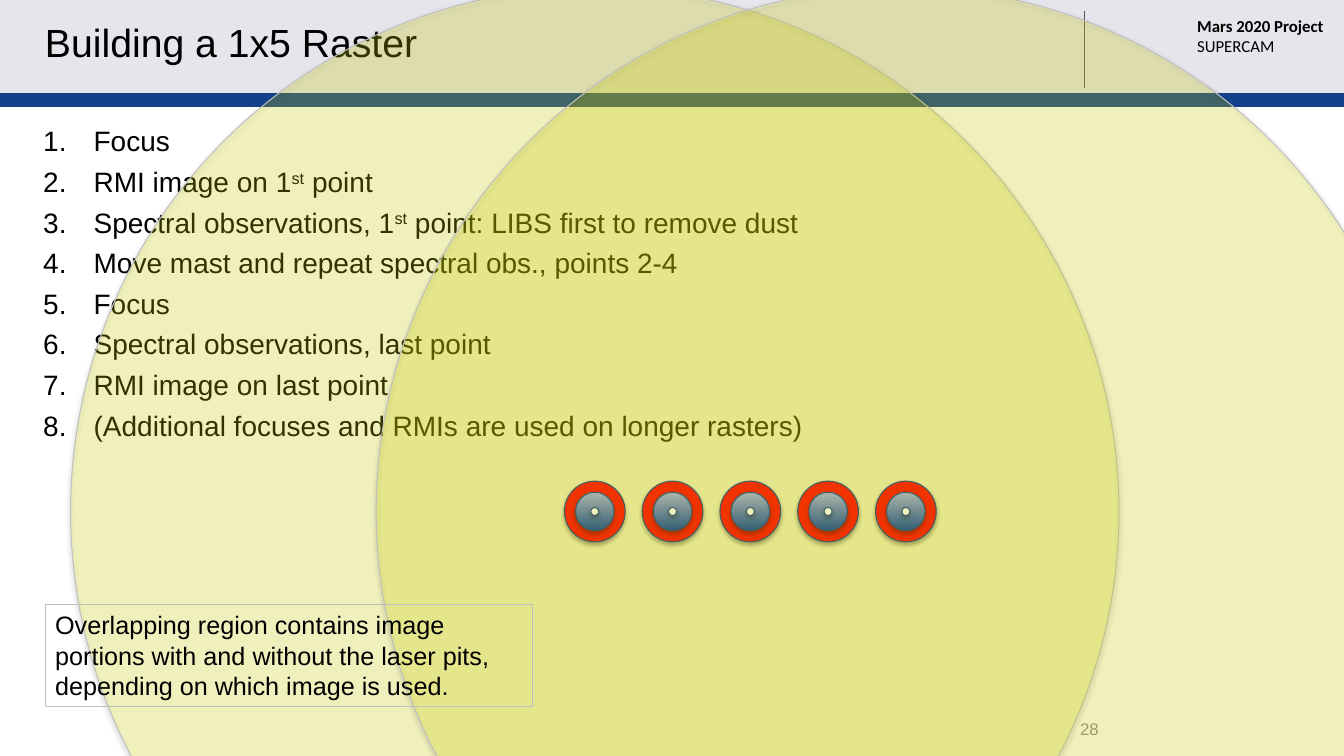
from lxml import etree
from pptx import Presentation
from pptx.dml.color import RGBColor
from pptx.enum.shapes import MSO_CONNECTOR, MSO_SHAPE
from pptx.enum.text import MSO_ANCHOR, PP_ALIGN
from pptx.oxml.ns import qn
from pptx.util import Cm, Pt

RECTANGLE, ELLIPSE = MSO_SHAPE.RECTANGLE, MSO_SHAPE.OVAL
STRAIGHT = MSO_CONNECTOR.STRAIGHT
MIDDLE, TOP = MSO_ANCHOR.MIDDLE, MSO_ANCHOR.TOP
LEFT, RIGHT = PP_ALIGN.LEFT, PP_ALIGN.RIGHT
NO_TABLE_STYLE = "{2D5ABB26-0587-4C30-8999-92F81FD0307C}"
TITLE_ONLY = 5
PAGE_WIDTH, PAGE_HEIGHT = 33.87, 19.05

STEPS = [
    "Focus",
    "RMI image on 1^st^ point",
    "Spectral observations, 1^st^ point: LIBS first to remove dust",
    "Move mast and repeat spectral obs., points 2-4",
    "Focus",
    "Spectral observations, last point",
    "RMI image on last point",
    "(Additional focuses and RMIs are used on longer rasters)",
]


def color(value):
    return RGBColor.from_string(value)


def child(parent, tag, **attributes):
    return etree.SubElement(parent, qn(tag), attributes)


class RasterSlide:
    """Holds the text style and the slide being drawn."""

    font = "Arial"
    ink = "000000"

    def __init__(self, page):
        self.page = page

    def fill_text(self, box, lines, size, font=None, ink=None, align=LEFT,
                  anchor=TOP, bold_first=False, numbered=False, gap=0):
        """Fill a box with paragraphs; text between ^ marks is superscript."""
        frame = box.text_frame
        frame.word_wrap = True
        frame.vertical_anchor = anchor
        for index, line in enumerate(lines):
            para = frame.paragraphs[0] if index == 0 else frame.add_paragraph()
            para.alignment = align
            para.space_before = Pt(gap if index else 0)
            if numbered:
                props = para._p.get_or_add_pPr()
                props.set("marL", str(Cm(1.27)))
                props.set("indent", str(Cm(-1.27)))
                child(props, "a:buFont", typeface="+mj-lt")
                child(props, "a:buAutoNum", type="arabicPeriod")
            style = {"size": Pt(size), "name": font or self.font,
                     "bold": bold_first and index == 0}
            for part, text in enumerate(line.split("^")):
                span = para.add_run()
                span.text = text
                for name, value in style.items():
                    setattr(span.font, name, value)
                span.font.color.rgb = color(ink or self.ink)
                if part % 2:
                    span._r.get_or_add_rPr().set("baseline", "30000")

    def title(self, text, left, top, width, height):
        box = self.page.shapes.title
        place = {"left": left, "top": top, "width": width, "height": height}
        for name, value in place.items():
            setattr(box, name, Cm(value))
        box.text_frame.margin_right = Cm(0.2)
        self.fill_text(box, [text], 28, anchor=MIDDLE)
        # Bring the title in front of the header band
        box._element.getparent().append(box._element)

    def text(self, lines, left, top, width, height, size, outline=None, **style):
        box = self.page.shapes.add_textbox(Cm(left), Cm(top), Cm(width), Cm(height))
        if outline:
            box.line.color.rgb = color(outline)
            box.line.width = Pt(0.75)
        self.fill_text(box, lines, size, **style)

    def band(self, left, top, width, height, fill):
        box = self.page.shapes.add_shape(
            RECTANGLE, Cm(left), Cm(top), Cm(width), Cm(height))
        box.shadow.inherit = False
        box.fill.solid()
        box.fill.fore_color.rgb = color(fill)
        box.line.fill.background()

    def stripe(self, top, width, height, fill, columns=2):
        """Thin one-row table without text."""
        table = self.page.shapes.add_table(
            1, columns, Cm(0), Cm(top), Cm(width), Cm(height)).table
        table.first_row = table.horz_banding = False
        table._tbl.tblPr.find(qn("a:tableStyleId")).text = NO_TABLE_STYLE
        for cell in table.iter_cells():
            cell.fill.solid()
            cell.fill.fore_color.rgb = color(fill)
            for side in ("left", "right", "top", "bottom"):
                setattr(cell, f"margin_{side}", 0)
            child(cell.text_frame.paragraphs[0]._p, "a:endParaRPr", sz="400")

    def rule(self, x, top, bottom, ink):
        line = self.page.shapes.add_connector(
            STRAIGHT, Cm(x), Cm(top), Cm(x), Cm(bottom))
        line.line.color.rgb = color(ink)
        line.line.width = Pt(1)
        child(line._element.spPr, "a:effectLst")

    def disc(self, x, y, diameter, fills, outline, opacity=None):
        """Shadowed circle about a centre; two fills run from bottom to top."""
        radius = diameter / 2
        circle = self.page.shapes.add_shape(
            ELLIPSE, Cm(x - radius), Cm(y - radius), Cm(diameter), Cm(diameter))
        if len(fills) > 1:
            circle.fill.gradient()
            circle.fill.gradient_angle = 90
            for stop, fill in zip(circle.fill.gradient_stops, fills):
                stop.color.rgb = color(fill)
        else:
            circle.fill.solid()
            circle.fill.fore_color.rgb = color(fills[0])
        props = circle._element.spPr
        if opacity:
            paint = props.find(qn("a:solidFill")).find(qn("a:srgbClr"))
            child(paint, "a:alpha", val=str(opacity * 1000))
        circle.line.color.rgb = color(outline)
        circle.line.width = Pt(0.75)
        circle.shadow.inherit = False
        shadow = child(props.find(qn("a:effectLst")), "a:outerShdw",
                       blurRad=str(Pt(3.1)), dist=str(Pt(1.8)),
                       dir="5400000", rotWithShape="0")
        child(child(shadow, "a:srgbClr", val="000000"), "a:alpha", val="35000")

    def image_field(self, x, y):
        self.disc(x, y, 26.42, ["FFFF00"], "BFBFBF", opacity=20)

    def raster_point(self, x, y):
        for diameter, fills in ((1.53, ["FF0000"]),
                                (0.97, ["013C9D", "A5B0E7"]),
                                (0.2, ["FFFFFF"])):
            self.disc(x, y, diameter, fills, "103E8B")


def main():
    deck = Presentation()
    deck.slide_width, deck.slide_height = Cm(PAGE_WIDTH), Cm(PAGE_HEIGHT)
    slide = RasterSlide(deck.slides.add_slide(deck.slide_layouts[TITLE_ONLY]))

    slide.band(0, 0, PAGE_WIDTH, 2.36, "E6E5EC")
    slide.stripe(2.34, PAGE_WIDTH, 0.36, "13418B")
    slide.rule(27.33, 0.28, 2.23, "595959")
    slide.text(["Mars 2020 Project", "SUPERCAM"], 29.92, 0.28, 6.45, 1.27, 12,
               font="Calibri", bold_first=True)
    slide.text(STEPS, 0.84, 3, 32.15, 14.75, 20, numbered=True, gap=5)
    slide.title("Building a 1x5 Raster", 0.88, 0.28, 26.11, 1.55)
    slide.text(["28"], 20.04, 17.85, 7.9, 1.02, 12, ink="8C8C8C",
               align=RIGHT, anchor=MIDDLE)

    row = 12.89
    slide.image_field(14.99, row)
    for index in range(5):
        slide.raster_point(14.99 + 1.96 * index, row)
    slide.image_field(22.69, row)

    slide.text(["Overlapping region contains image portions with and without "
                "the laser pits, depending on which image is used."],
               1.14, 15.24, 12.29, 2.57, 18, outline="BFBFBF")
    deck.save("out.pptx")


if __name__ == "__main__":
    main()
